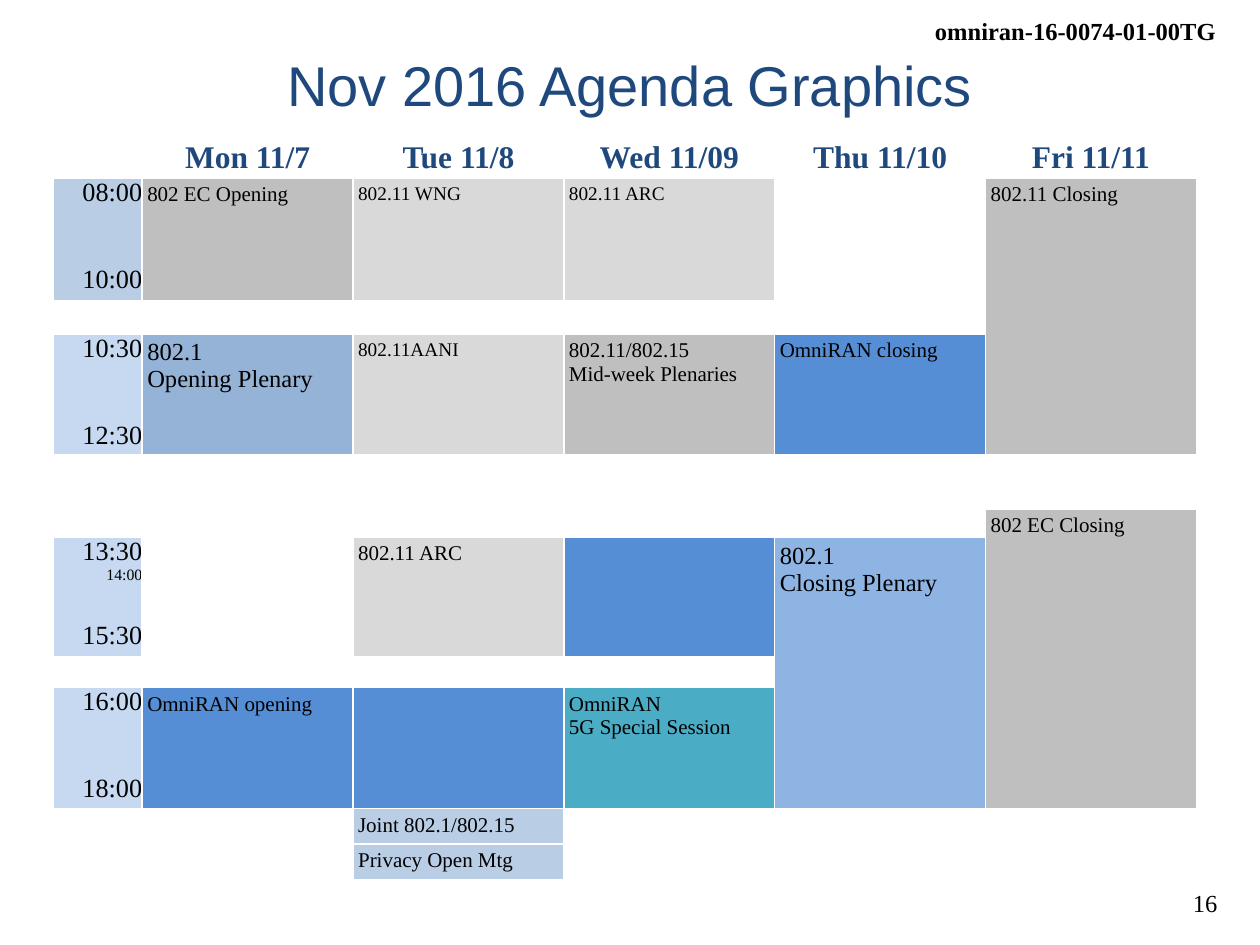
from lxml.etree import SubElement
from pptx import Presentation
from pptx.dml.color import RGBColor as RGB
from pptx.enum.text import MSO_ANCHOR as Anchor, PP_ALIGN as Align
from pptx.oxml.ns import qn
from pptx.util import Pt

COLOURS = {
    "white": "FFFFFF", "black": "000000", "navy": "1F497D",
    "hours": "C6D9F1", "early": "B9CDE5", "plenary": "BFBFBF",
    "wireless": "D9D9D9", "opening": "95B3D7", "closing": "8EB4E3",
    "omniran": "558ED5", "special": "4BACC6",
}
SERIF, SANS = "Times New Roman", "Arial"

DAYS = ["Mon 11/7", "Tue 11/8", "Wed 11/09", "Thu 11/10", "Fri 11/11"]
COL_WIDTHS = [51.1] + [120.5] * len(DAYS)
ROW_HEIGHTS = [21.7, 70.3, 18.9, 65.1, 30.9, 16, 18, 46, 17.7, 68.6, 18.9, 18.9]

# row, rows spanned, colour, lines as (text, size), gap before the last line
HOURS = [
    (1, 1, "early", [("08:00", 15), ("10:00", 15)], 33.2),
    (3, 1, "hours", [("10:30", 15), ("12:30", 15)], 33.2),
    (6, 2, "hours", [("13:30", 15), ("14:00", 9), ("15:30", 15)], 21.4),
    (9, 1, "hours", [("16:00", 15), ("18:00", 15)], 33.2),
]

# row, column, rows spanned, colour, text, size
SESSIONS = [
    (1, 1, 1, "plenary", "802 EC Opening", 12),
    (1, 2, 1, "wireless", "802.11 WNG", 11),
    (1, 3, 1, "wireless", "802.11 ARC", 11),
    (1, 5, 3, "plenary", "802.11 Closing", 12),
    (3, 1, 1, "opening", "802.1\vOpening Plenary", 14),
    (3, 2, 1, "wireless", "802.11AANI", 11),
    (3, 3, 1, "plenary", "802.11/802.15\vMid-week Plenaries", 12),
    (3, 4, 1, "omniran", "OmniRAN closing", 12),
    (5, 5, 5, "plenary", "802 EC Closing", 12),
    (6, 2, 2, "wireless", "802.11 ARC", 12),
    (6, 3, 2, "omniran", "", 12),
    (6, 4, 4, "closing", "802.1\vClosing Plenary", 14),
    (9, 1, 1, "omniran", "OmniRAN opening", 12),
    (9, 2, 1, "omniran", "", 12),
    (9, 3, 1, "special", "OmniRAN\n5G Special Session", 12),
    (10, 2, 1, "early", "Joint 802.1/802.15", 12),
    (11, 2, 1, "early", "Privacy Open Mtg", 12),
]

# row, column, rows spanned
BREAKS = [(4, 0, 2), (4, 1, 3), (4, 2, 2), (4, 3, 2), (4, 4, 2),
          (10, 0, 2), (10, 3, 2), (10, 4, 2)]

# text, left, top, width, height, size, font, colour, bold, align, wrap, top inset
LABELS = [
    ("omniran-16-0074-01-00TG", 525.6, 5.8, 176.4, 24.5, 14, SERIF, "black", True, Align.RIGHT, False, 3.6),
    ("16", 671.8, 504, 31, 24.5, 14, SERIF, "black", False, Align.RIGHT, False, 3.6),
    ("Nov 2016 Agenda Graphics", 36, 21.6, 648, 56.2, 32, SANS, "navy", False, Align.CENTER, True, 7),
]


def style(paragraph, size, colour="black", font=SERIF, bold=False, align=Align.LEFT):
    paragraph.alignment = align
    paragraph.font.size = Pt(size)
    paragraph.font.name = font
    paragraph.font.bold = bold
    paragraph.font.color.rgb = RGB.from_string(COLOURS[colour])


def paint(cell, colour, inset=0):
    cell.fill.solid()
    cell.fill.fore_color.rgb = RGB.from_string(COLOURS[colour])
    cell.vertical_anchor = Anchor.TOP
    cell.margin_left = cell.margin_right = Pt(inset)
    cell.margin_top = cell.margin_bottom = Pt(inset)


def span(row, column, rows):
    if rows > 1:
        agenda.cell(row, column).merge(agenda.cell(row + rows - 1, column))
    return agenda.cell(row, column)


deck = Presentation()
deck.slide_width, deck.slide_height = Pt(720), Pt(540)
slide = deck.slides.add_slide(deck.slide_layouts[6])

for text, left, top, width, height, size, font, colour, bold, align, wrap, inset in LABELS:
    frame = slide.shapes.add_textbox(Pt(left), Pt(top), Pt(width), Pt(height)).text_frame
    frame.word_wrap = wrap
    frame.margin_top = Pt(inset)
    frame.text = text
    style(frame.paragraphs[0], size, colour, font, bold, align)

agenda = slide.shapes.add_table(
    len(ROW_HEIGHTS), len(COL_WIDTHS), Pt(30.2), Pt(80),
    Pt(sum(COL_WIDTHS)), Pt(sum(ROW_HEIGHTS))).table
agenda.horz_banding = False
for column, width in zip(agenda.columns, COL_WIDTHS):
    column.width = Pt(width)
for row, height in zip(agenda.rows, ROW_HEIGHTS):
    row.height = Pt(height)
for cell in agenda.iter_cells():
    paint(cell, "white")

for column, day in enumerate(DAYS, 1):
    heading = agenda.cell(0, column)
    heading.text = day
    style(heading.text_frame.paragraphs[0], 18, "navy", bold=True, align=Align.CENTER)

for row, rows, colour, times, gap in HOURS:
    slot = span(row, 0, rows)
    paint(slot, colour)
    slot.text = "\n".join(time for time, _ in times)
    for paragraph, (_, size) in zip(slot.text_frame.paragraphs, times):
        style(paragraph, size, align=Align.RIGHT)
    slot.text_frame.paragraphs[-1].space_before = Pt(gap)

for row, column, rows, colour, text, size in SESSIONS:
    session = span(row, column, rows)
    paint(session, colour, 2.9)
    session.text = text
    for paragraph in session.text_frame.paragraphs:
        style(paragraph, size)

for row, column, rows in BREAKS:
    span(row, column, rows)

for cell in agenda.iter_cells():
    if not cell.text:
        SubElement(cell.text_frame.paragraphs[0]._p, qn("a:endParaRPr"), sz="600")

deck.save("out.pptx")
